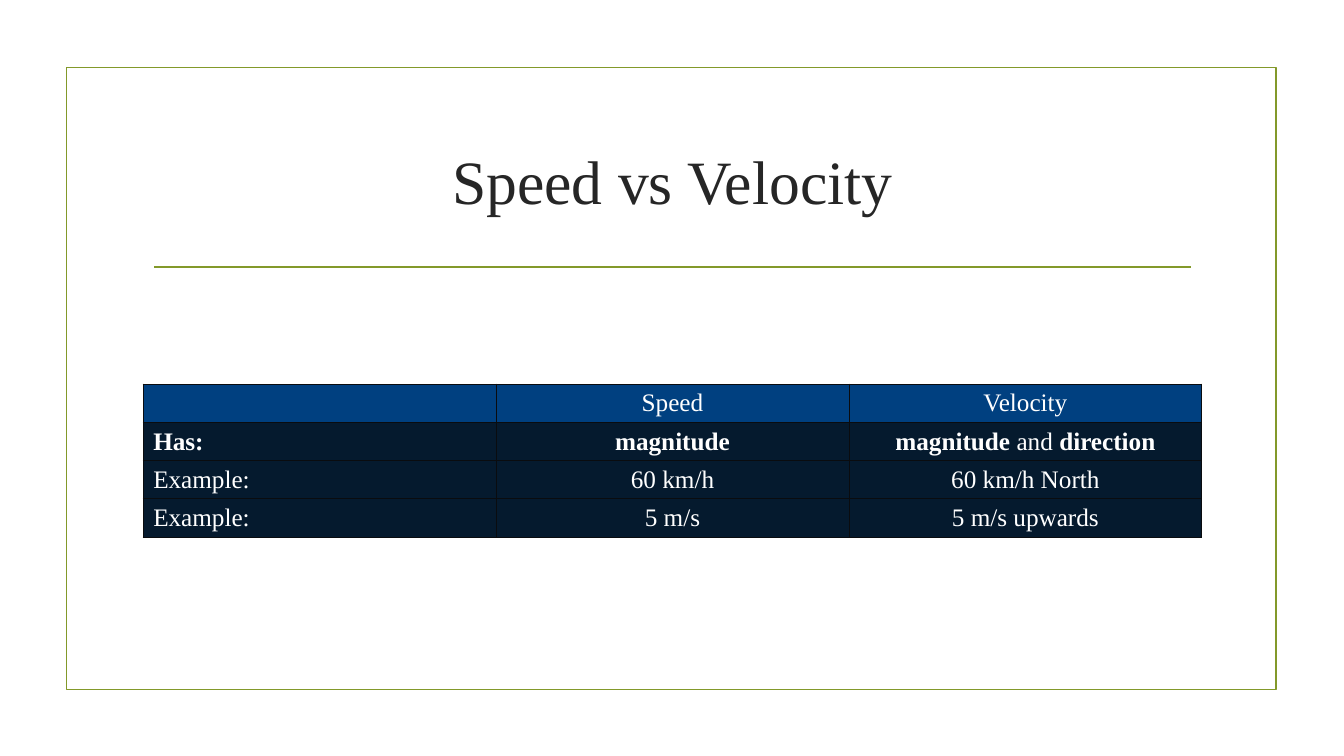
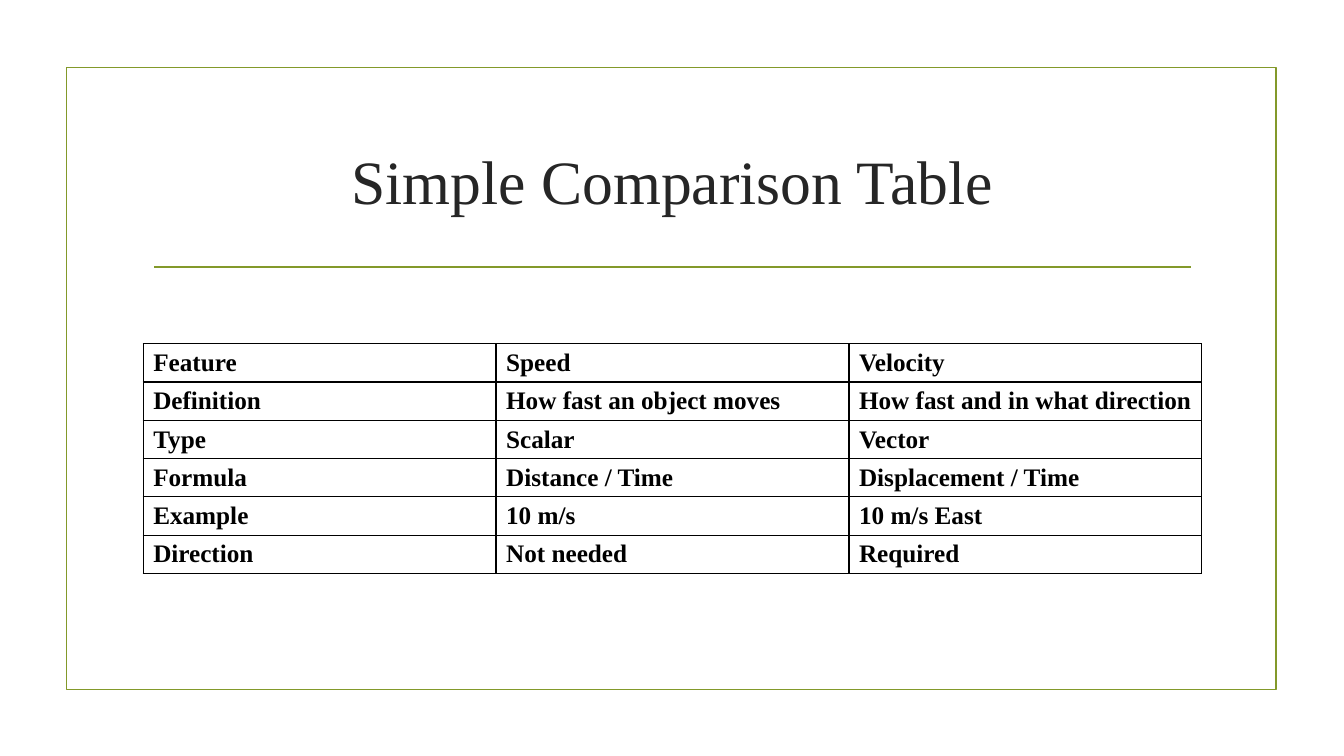
"""Build two slides that compare speed with velocity in tables."""
from lxml.etree import SubElement
from pptx import Presentation
from pptx.dml.color import RGBColor
from pptx.enum.shapes import MSO_CONNECTOR, MSO_SHAPE
from pptx.enum.text import MSO_ANCHOR, PP_ALIGN
from pptx.oxml.ns import qn
from pptx.util import Inches, Pt

WHITE = RGBColor(0xFF, 0xFF, 0xFF)
BLACK = RGBColor(0, 0, 0)
OLIVE = RGBColor(0x83, 0x99, 0x2A)
CHARCOAL = RGBColor(0x26, 0x26, 0x26)
BLUE = RGBColor(0x00, 0x40, 0x80)
NAVY = RGBColor(0x05, 0x1A, 0x2E)
INK = RGBColor(0x0A, 0x0C, 0x0F)
FONT = "Times New Roman"
LEFT, WIDTH, ROW_HEIGHT = 1.42, 10.5, 0.38


def write(frame, text, size=18, color=BLACK, align=PP_ALIGN.LEFT, bold=False):
    """Write one paragraph; asterisks switch bold on and off."""
    para = frame.paragraphs[0]
    para.alignment = align
    for index, part in enumerate(text.split("*")):
        if part:
            span = para.add_run()
            span.text = part
            span.font.name = FONT
            span.font.size = Pt(size)
            span.font.color.rgb = color
            span.font.bold = bold or index % 2 == 1


def set_borders(cell, color, width):
    """Draw the four sides of a cell."""
    props = cell._tc.get_or_add_tcPr()
    for position, side in enumerate(("a:lnL", "a:lnR", "a:lnT", "a:lnB")):
        line = props.makeelement(qn(side), {"w": str(Pt(width))})
        fill = SubElement(line, qn("a:solidFill"))
        SubElement(fill, qn("a:srgbClr"), val=str(color))
        props.insert(position, line)


slides = [
    dict(
        title="Speed vs Velocity", top=3.81, color=WHITE, bold=False,
        align=PP_ALIGN.CENTER, header_fill=BLUE, body_fill=NAVY,
        border=INK, border_width=0.75,
        rows=[
            ("", "Speed", "Velocity"),
            ("*Has:*", "*magnitude*", "*magnitude* and *direction*"),
            ("Example:", "60 km/h", "60 km/h North"),
            ("Example:", "5 m/s", "5 m/s upwards"),
        ],
    ),
    dict(
        title="Simple Comparison Table", top=3.41, color=BLACK, bold=True,
        align=PP_ALIGN.LEFT, header_fill=None, body_fill=None,
        border=BLACK, border_width=1,
        rows=[
            ("Feature", "Speed", "Velocity"),
            ("Definition", "How fast an object moves", "How fast and in what direction"),
            ("Type", "Scalar", "Vector"),
            ("Formula", "Distance / Time", "Displacement / Time"),
            ("Example", "10 m/s", "10 m/s East"),
            ("Direction", "Not needed", "Required"),
        ],
    ),
]

deck = Presentation()
deck.slide_width, deck.slide_height = Inches(13.33), Inches(7.5)

for content in slides:
    page = deck.slides.add_slide(deck.slide_layouts[6])

    border = page.shapes.add_shape(
        MSO_SHAPE.RECTANGLE, Inches(0.66), Inches(0.67), Inches(12), Inches(6.17))
    border.shadow.inherit = False
    border.fill.background()
    rule = page.shapes.add_connector(
        MSO_CONNECTOR.STRAIGHT, Inches(1.53), Inches(2.65), Inches(11.81), Inches(2.65))
    SubElement(rule._element.spPr, qn("a:effectLst"))
    for outline in (border.line, rule.line):
        outline.color.rgb = OLIVE
        outline.width = Pt(1.25)

    title = page.shapes.add_textbox(Inches(LEFT), Inches(1.07), Inches(WIDTH), Inches(1.43))
    title.text_frame.word_wrap = True
    title.text_frame.vertical_anchor = MSO_ANCHOR.MIDDLE
    write(title.text_frame, content["title"], size=44, color=CHARCOAL, align=PP_ALIGN.CENTER)

    rows = content["rows"]
    table = page.shapes.add_table(
        len(rows), len(rows[0]), Inches(LEFT), Inches(content["top"]),
        Inches(WIDTH), Inches(ROW_HEIGHT * len(rows))).table
    table.first_row = table.horz_banding = False
    for row_index, row in enumerate(rows):
        fill = content["body_fill"] if row_index else content["header_fill"]
        for column_index, text in enumerate(row):
            cell = table.cell(row_index, column_index)
            cell.vertical_anchor = MSO_ANCHOR.MIDDLE
            cell.margin_top = cell.margin_bottom = Inches(0.04)
            if fill is None:
                cell.fill.background()
            else:
                cell.fill.solid()
                cell.fill.fore_color.rgb = fill
            set_borders(cell, content["border"], content["border_width"])
            write(cell.text_frame, text, color=content["color"], bold=content["bold"],
                  align=content["align"] if column_index else PP_ALIGN.LEFT)

deck.save("out.pptx")
